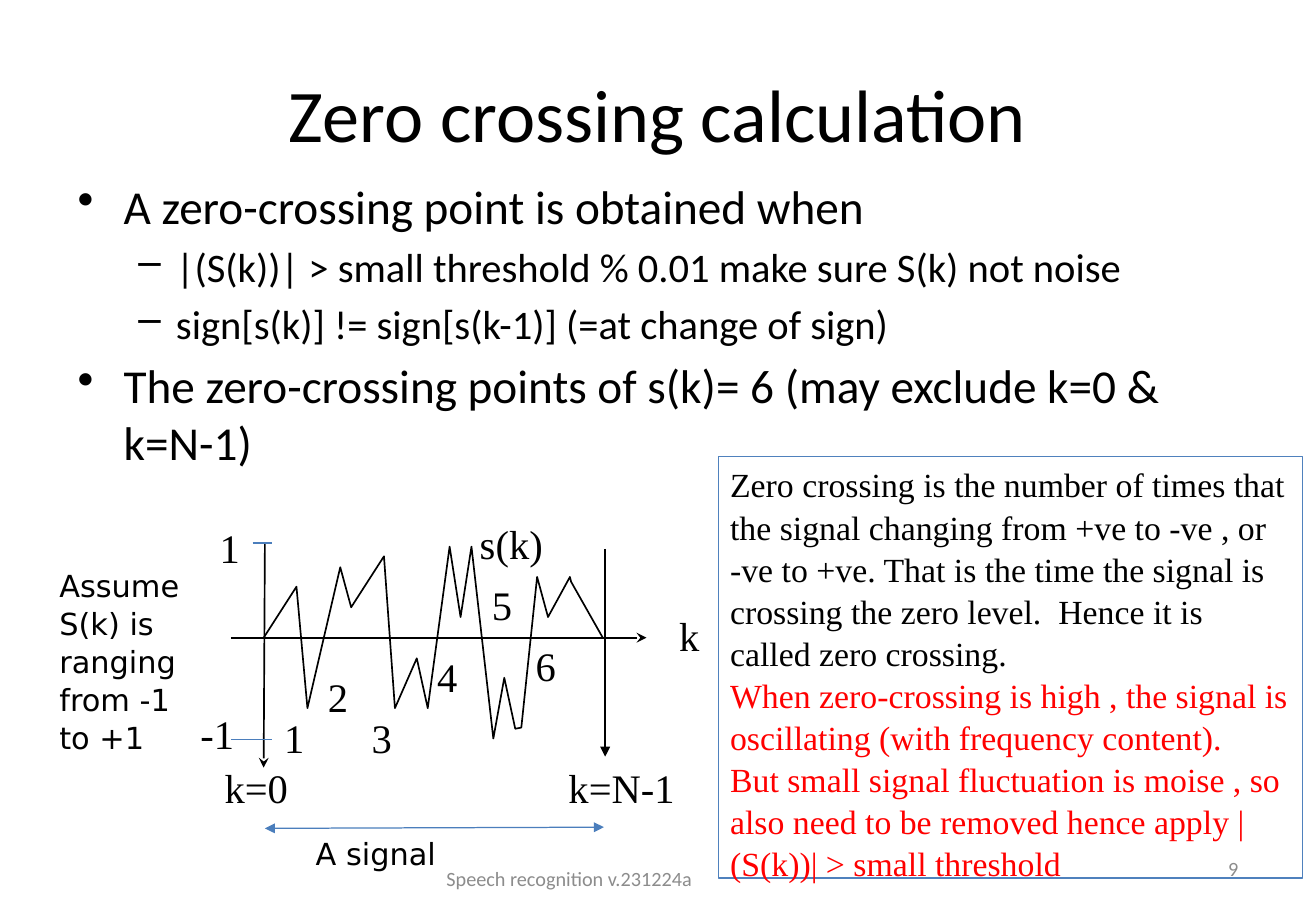
"""Build the slide on zero crossing calculation."""
from dataclasses import dataclass
from typing import Optional

from lxml import etree
from pptx import Presentation
from pptx import util as u
from pptx.dml.color import RGBColor
from pptx.enum import shapes, text
from pptx.oxml.ns import qn

COLOURS = {"black": "000000", "red": "FF0000", "grey": "8C8C8C",
           "box": "4F81BD", "span": "4B7EBC"}
SERIF, SANS, BODY = "Times New Roman", "DejaVu Sans", "Calibri"


@dataclass
class Label:
    x: float
    y: float
    w: float
    h: float
    words: str
    size: int = 24
    font: str = SERIF
    colour: str = "black"
    align: text.PP_ALIGN = text.PP_ALIGN.LEFT
    anchor: text.MSO_ANCHOR = text.MSO_ANCHOR.TOP
    wrap: bool = False
    spacing: Optional[float] = None


@dataclass
class Line:
    x1: float
    y1: float
    x2: float
    y2: float
    colour: str = "black"
    width: float = 1
    head: Optional[str] = None
    tail: Optional[str] = None


@dataclass
class Bullet:
    words: str
    level: int = 0


CENTRE, MIDDLE = text.PP_ALIGN.CENTER, text.MSO_ANCHOR.MIDDLE

BULLETS = [
    Bullet("A zero-crossing point is obtained when"),
    Bullet("|(S(k))| > small threshold % 0.01 make sure S(k) not noise", 1),
    Bullet("sign[s(k)] != sign[s(k-1)] (=at change of sign)", 1),
    Bullet("The zero-crossing points of s(k)= 6 (may exclude k=0 & k=N-1)"),
]
LEVELS = [("•", 28, 0.38, -0.38), ("–", 24, 0.81, -0.31)]

CROSSINGS = [(2.24, 5.82), (2.6, 5.48), (2.96, 5.82),
             (3.5, 5.32), (3.95, 4.73), (4.31, 5.23)]

LABELS = [
    Label(0.54, 0.3, 9.75, 1.25, "Zero crossing calculation", 44, BODY,
          align=CENTRE, anchor=MIDDLE, wrap=True),
    Label(5.49, 4.98, 0.37, 0.51, "k"),
    Label(3.85, 4.22, 0.73, 0.51, "s(k)"),
    *(Label(x, y, 0.37, 0.5, str(n)) for n, (x, y) in enumerate(CROSSINGS, 1)),
    Label(4.58, 6.23, 1.09, 0.51, "k=N-1"),
    Label(1.75, 6.23, 0.73, 0.51, "k=0"),
    Label(1.71, 4.26, 0.37, 0.51, "1"),
    Label(1.55, 5.79, 0.48, 0.51, "-1"),
    Label(2.97, 7.03, 3.43, 0.4, "Speech recognition v.231224a", 12, BODY,
          "grey", CENTRE, MIDDLE, True),
    Label(7.76, 6.95, 2.53, 0.4, "9", 12, BODY, "grey",
          text.PP_ALIGN.RIGHT, MIDDLE, True),
    Label(2.5, 6.83, 1.2, 0.4, "A signal", 18, SANS),
    Label(0.39, 4.61, 1.22, 1.92, "Assume S(k) is ranging from -1 to +1",
          18, SANS, wrap=True, spacing=1.04),
]

LINES = [
    Line(2.18, 4.47, 2.17, 6.32, tail="stealth"),
    Line(4.98, 4.52, 4.98, 6.23, tail="triangle"),
    Line(1.9, 5.25, 5.32, 5.25, tail="stealth"),
    Line(2.18, 6.82, 4.97, 6.81, "span", 0.75, "triangle", "triangle"),
    Line(2.08, 4.47, 2.24, 4.47, "span", 0.75),
    Line(1.9, 6.09, 2.24, 6.09, "span", 0.75),
]

SIGNAL = [
    (2.17, 5.25), (2.44, 4.83), (2.53, 5.83), (2.8, 4.67), (2.89, 5),
    (3.16, 4.58), (3.25, 5.83), (3.43, 5.42), (3.52, 5.83), (3.7, 4.5),
    (3.79, 5.08), (3.88, 4.5), (4.06, 6.08), (4.15, 5.58), (4.24, 6),
    (4.29, 5.99), (4.42, 4.75), (4.51, 5.08), (4.69, 4.75), (4.7, 4.79),
    (4.96, 5.25),
]

EXPLANATION = [
    ("Zero crossing is the number of times that the signal changing from "
     "+ve to -ve , or -ve to +ve. That is the time the signal is crossing "
     "the zero level.  Hence it is called zero crossing.", "black"),
    ("When zero-crossing is high , the signal is oscillating "
     "(with frequency content).", "red"),
    ("But small signal fluctuation is moise , so also need to be removed "
     "hence apply |(S(k))| > small threshold", "red"),
]


def rgb(name: str) -> RGBColor:
    return RGBColor.from_string(COLOURS[name])


def box(x: float, y: float, w: float, h: float) -> tuple:
    return tuple(u.Inches(v) for v in (x, y, w, h))


def style(p, size: int, font: str, colour: str) -> None:
    p.font.size = u.Pt(size)
    p.font.name = font
    p.font.color.rgb = rgb(colour)


def paragraph(tf, index: int):
    return tf.add_paragraph() if index else tf.paragraphs[0]


def draw_label(s, label: Label) -> None:
    tf = s.shapes.add_textbox(*box(label.x, label.y, label.w, label.h)).text_frame
    tf.word_wrap = label.wrap
    tf.vertical_anchor = label.anchor
    p = tf.paragraphs[0]
    p.text = label.words
    p.alignment = label.align
    p.line_spacing = label.spacing
    style(p, label.size, label.font, label.colour)


def draw_line(s, line: Line) -> None:
    sp = s.shapes.add_connector(
        shapes.MSO_CONNECTOR.STRAIGHT,
        *box(line.x1, line.y1, line.x2, line.y2))
    sp.line.color.rgb = rgb(line.colour)
    sp.line.width = u.Pt(line.width)
    ln = sp.line._get_or_add_ln()
    for tag, kind in (("a:headEnd", line.head), ("a:tailEnd", line.tail)):
        if kind:
            etree.SubElement(ln, qn(tag), type=kind)
    etree.SubElement(sp._element.spPr, qn("a:effectLst"))


def draw_bullets(s) -> None:
    tf = s.shapes.add_textbox(*box(0.54, 1.41, 10.23, 4.95)).text_frame
    tf.word_wrap = True
    for i, bullet in enumerate(BULLETS):
        mark, size, margin, indent = LEVELS[bullet.level]
        p = paragraph(tf, i)
        p.text = bullet.words
        p.level = bullet.level
        p.space_before = u.Pt(size * 0.2)
        style(p, size, BODY, "black")
        pPr = p._p.get_or_add_pPr()
        pPr.set("marL", str(u.Inches(margin)))
        pPr.set("indent", str(u.Inches(indent)))
        bu = etree.Element(qn("a:buChar"), char=mark)
        pPr.find(qn("a:defRPr")).addprevious(bu)


def draw_signal(s) -> None:
    points = [(u.Inches(x), u.Inches(y)) for x, y in SIGNAL]
    builder = s.shapes.build_freeform(*points[0])
    builder.add_line_segments(points[1:], close=False)
    sp = builder.convert_to_shape()
    sp.shadow.inherit = False
    sp.fill.background()
    sp.line.color.rgb = rgb("black")
    sp.line.width = u.Pt(1)


def draw_explanation(s) -> None:
    sp = s.shapes.add_shape(shapes.MSO_SHAPE.RECTANGLE,
                            *box(5.91, 3.76, 4.81, 3.47))
    sp.shadow.inherit = False
    sp.fill.background()
    sp.line.color.rgb = rgb("box")
    sp.line.width = u.Pt(0.75)
    tf = sp.text_frame
    tf.word_wrap = True
    tf.vertical_anchor = text.MSO_ANCHOR.TOP
    for i, (words, colour) in enumerate(EXPLANATION):
        p = paragraph(tf, i)
        p.text = words
        p.alignment = text.PP_ALIGN.LEFT
        p.line_spacing = 1.04
        style(p, 20, SERIF, colour)


def main() -> None:
    prs = Presentation()
    prs.slide_width, prs.slide_height = u.Inches(10.83), u.Inches(7.5)
    s = prs.slides.add_slide(prs.slide_layouts[6])
    draw_bullets(s)
    for line in LINES:
        draw_line(s, line)
    draw_signal(s)
    for label in LABELS:
        draw_label(s, label)
    draw_explanation(s)
    prs.save("out.pptx")


if __name__ == "__main__":
    main()
